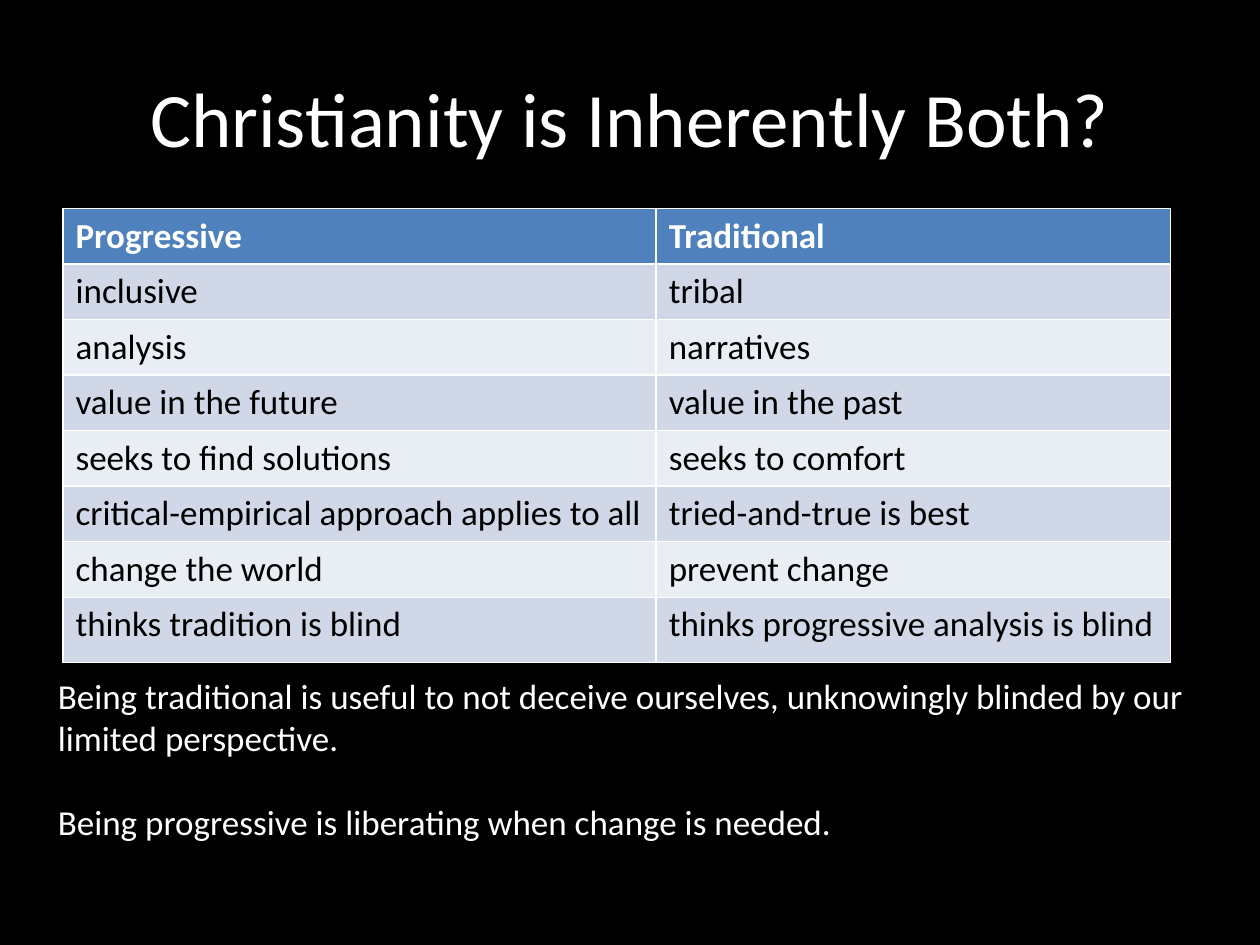
from dataclasses import dataclass

from pptx import Presentation
from pptx.dml.color import RGBColor
from pptx.enum.text import MSO_ANCHOR, MSO_AUTO_SIZE, PP_ALIGN
from pptx.util import Pt


@dataclass(frozen=True)
class Theme:
    font: str = "Calibri"
    title_size: int = 44
    text_size: int = 20
    background: RGBColor = RGBColor(0x00, 0x00, 0x00)
    light: RGBColor = RGBColor(0xFF, 0xFF, 0xFF)
    dark: RGBColor = RGBColor(0x00, 0x00, 0x00)
    header: RGBColor = RGBColor(0x4F, 0x81, 0xBD)
    bands: tuple = (RGBColor(0xD0, 0xD8, 0xE8), RGBColor(0xE9, 0xED, 0xF4))


THEME = Theme()

TITLE = "Christianity is Inherently Both?"
COMPARISON = [
    ("Progressive", "Traditional"),
    ("inclusive", "tribal"),
    ("analysis", "narratives"),
    ("value in the future", "value in the past"),
    ("seeks to find solutions", "seeks to comfort"),
    ("critical-empirical approach applies to all", "tried-and-true is best"),
    ("change the world", "prevent change"),
    ("thinks tradition is blind", "thinks progressive analysis is blind"),
]
CONCLUSIONS = [
    "Being traditional is useful to not deceive ourselves, "
    "unknowingly blinded by our limited perspective.",
    "Being progressive is liberating when change is needed.",
]


def write(p, text, size, color, bold=False):
    """Add one formatted run to a paragraph."""
    r = p.add_run()
    r.text = text
    values = {"name": THEME.font, "size": Pt(size), "bold": bold}
    for name, value in values.items():
        setattr(r.font, name, value)
    r.font.color.rgb = color


def add_title(s, box):
    sp = s.shapes.title
    for name, value in zip(("left", "top", "width", "height"), box):
        setattr(sp, name, Pt(value))
    tf = sp.text_frame
    tf.vertical_anchor = MSO_ANCHOR.MIDDLE
    p = tf.paragraphs[0]
    p.alignment = PP_ALIGN.CENTER
    write(p, TITLE, THEME.title_size, THEME.light)


def add_comparison(s, box, first_column, last_row):
    """Two-column table; the last row is taller than the others."""
    left, top, width, height = box
    rows = len(COMPARISON)
    table = s.shapes.add_table(rows, 2, *map(Pt, box)).table
    for column, size in zip(table.columns, (first_column, width - first_column)):
        column.width = Pt(size)
    for row in table.rows:
        row.height = Pt((height - last_row) / (rows - 1))
    table.rows[rows - 1].height = Pt(last_row)

    for i, texts in enumerate(COMPARISON):
        is_header = i == 0
        fill = THEME.header if is_header else THEME.bands[(i - 1) % 2]
        color = THEME.light if is_header else THEME.dark
        for cell, text in zip(table.rows[i].cells, texts):
            cell.fill.solid()
            cell.fill.fore_color.rgb = fill
            write(cell.text_frame.paragraphs[0], text, THEME.text_size, color, is_header)


def add_conclusions(s, box):
    tf = s.shapes.add_textbox(*map(Pt, box)).text_frame
    tf.word_wrap = True
    tf.auto_size = MSO_AUTO_SIZE.SHAPE_TO_FIT_TEXT
    for i, text in enumerate(CONCLUSIONS):
        p = tf.add_paragraph() if i else tf.paragraphs[0]
        # One line of space between the paragraphs
        p.space_before = Pt(24.4 if i else 0)
        write(p, text, THEME.text_size, THEME.light)


def main():
    prs = Presentation()
    prs.slide_width, prs.slide_height = Pt(720), Pt(540)
    s = prs.slides.add_slide(prs.slide_layouts[5])
    s.background.fill.solid()
    s.background.fill.fore_color.rgb = THEME.background

    add_title(s, (36, 21.6, 648, 90))
    add_comparison(s, (36, 119.25, 633, 239), first_column=339, last_row=37.4)
    add_conclusions(s, (26, 381.6, 664.6, 104.4))
    prs.save("out.pptx")


if __name__ == "__main__":
    main()
